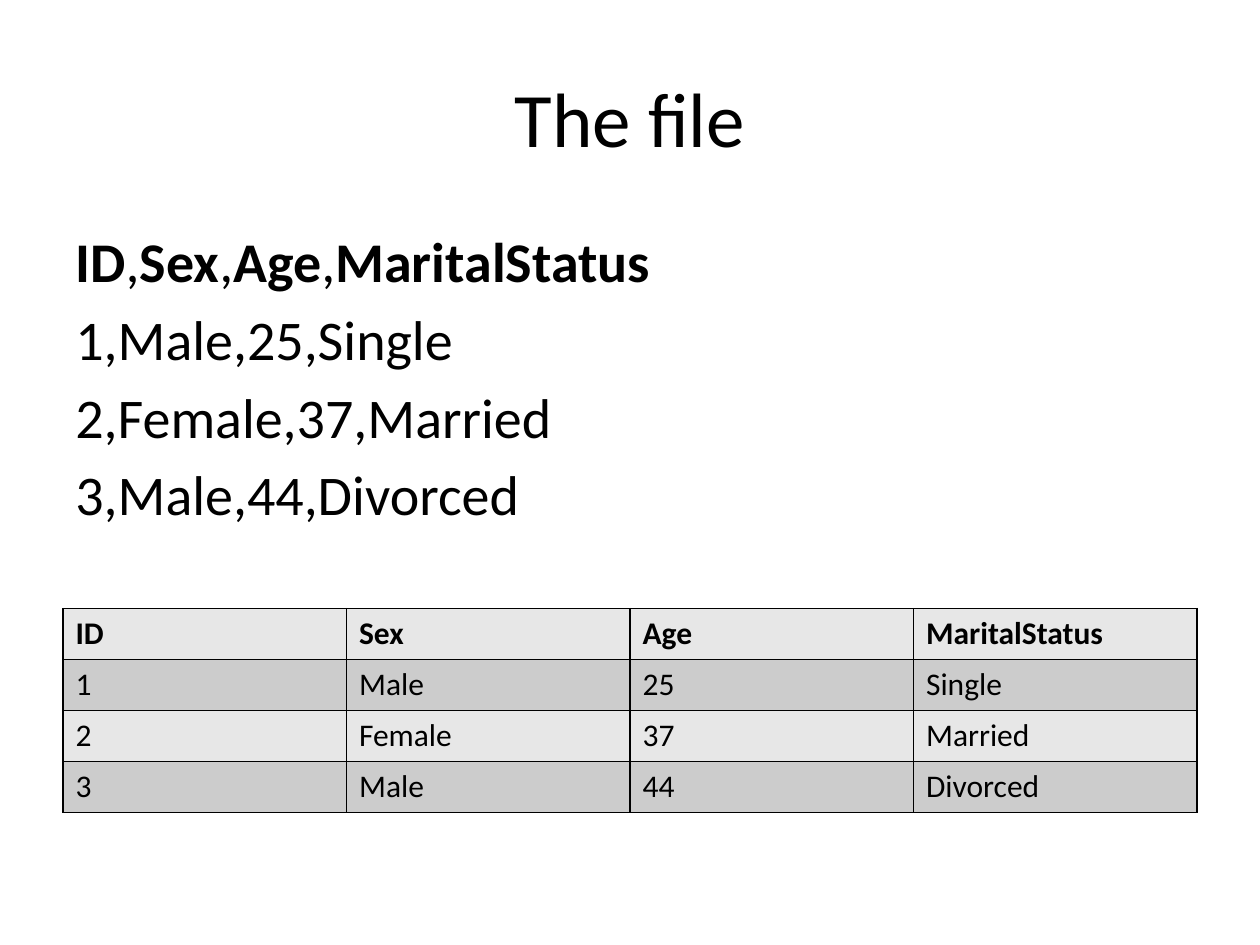
from pptx import Presentation
from pptx.dml.color import RGBColor
from pptx.enum.text import MSO_ANCHOR, PP_ALIGN
from pptx.oxml import parse_xml
from pptx.oxml.ns import nsdecls
from pptx.util import Inches, Pt

COLORS = {"text": "000000", "border": "000000", "light": "E7E7E7", "dark": "CCCCCC"}
ROWS = [
    ["ID", "Sex", "Age", "MaritalStatus"],
    ["1", "Male", "25", "Single"],
    ["2", "Female", "37", "Married"],
    ["3", "Male", "44", "Divorced"],
]

prs = Presentation()
prs.slide_width, prs.slide_height = Inches(10), Inches(7.5)
s = prs.slides.add_slide(prs.slide_layouts[6])
W, H = prs.slide_width, prs.slide_height
left, width = int(W * 0.05), int(W * 0.9)


def add_run(p, text, size, bold=False):
    r = p.add_run()
    r.text = text
    r.font.name = "Calibri"
    r.font.size = Pt(size)
    r.font.bold = bold
    r.font.color.rgb = RGBColor.from_string(COLORS["text"])


def add_border(cell, side):
    cell._tc.get_or_add_tcPr().append(parse_xml(
        f'<a:{side} {nsdecls("a")} w="12700"><a:solidFill>'
        f'<a:srgbClr val="{COLORS["border"]}"/></a:solidFill></a:{side}>'))


# Title
tf = s.shapes.add_textbox(left, int(H * 0.04), width, Inches(1.25)).text_frame
tf.word_wrap = True
tf.vertical_anchor = MSO_ANCHOR.MIDDLE
p = tf.paragraphs[0]
p.alignment = PP_ALIGN.CENTER
add_run(p, "The file", 44)

# Table of the parsed file
row_h = Inches(0.405)
tbl = s.shapes.add_table(len(ROWS), len(ROWS[0]), left, Inches(4.83),
                         width, row_h * len(ROWS)).table
for i, row in enumerate(ROWS):
    tbl.rows[i].height = row_h
    for j, value in enumerate(row):
        cell = tbl.cell(i, j)
        for side in ("lnL", "lnR", "lnT", "lnB"):
            add_border(cell, side)
        cell.fill.solid()
        cell.fill.fore_color.rgb = RGBColor.from_string(COLORS["dark" if i % 2 else "light"])
        add_run(cell.text_frame.paragraphs[0], value, 18, bold=i == 0)

# Raw file lines, with bold column names
tf = s.shapes.add_textbox(left, Inches(1.75), width, int(H * 0.66)).text_frame
tf.word_wrap = True
for i, row in enumerate(ROWS):
    p = tf.add_paragraph() if i else tf.paragraphs[0]
    p.space_before = Pt(6)
    if i:
        add_run(p, ",".join(row), 32)
        continue
    for j, name in enumerate(row):
        if j:
            add_run(p, ",", 32)
        add_run(p, name, 32, bold=True)

prs.save("out.pptx")
